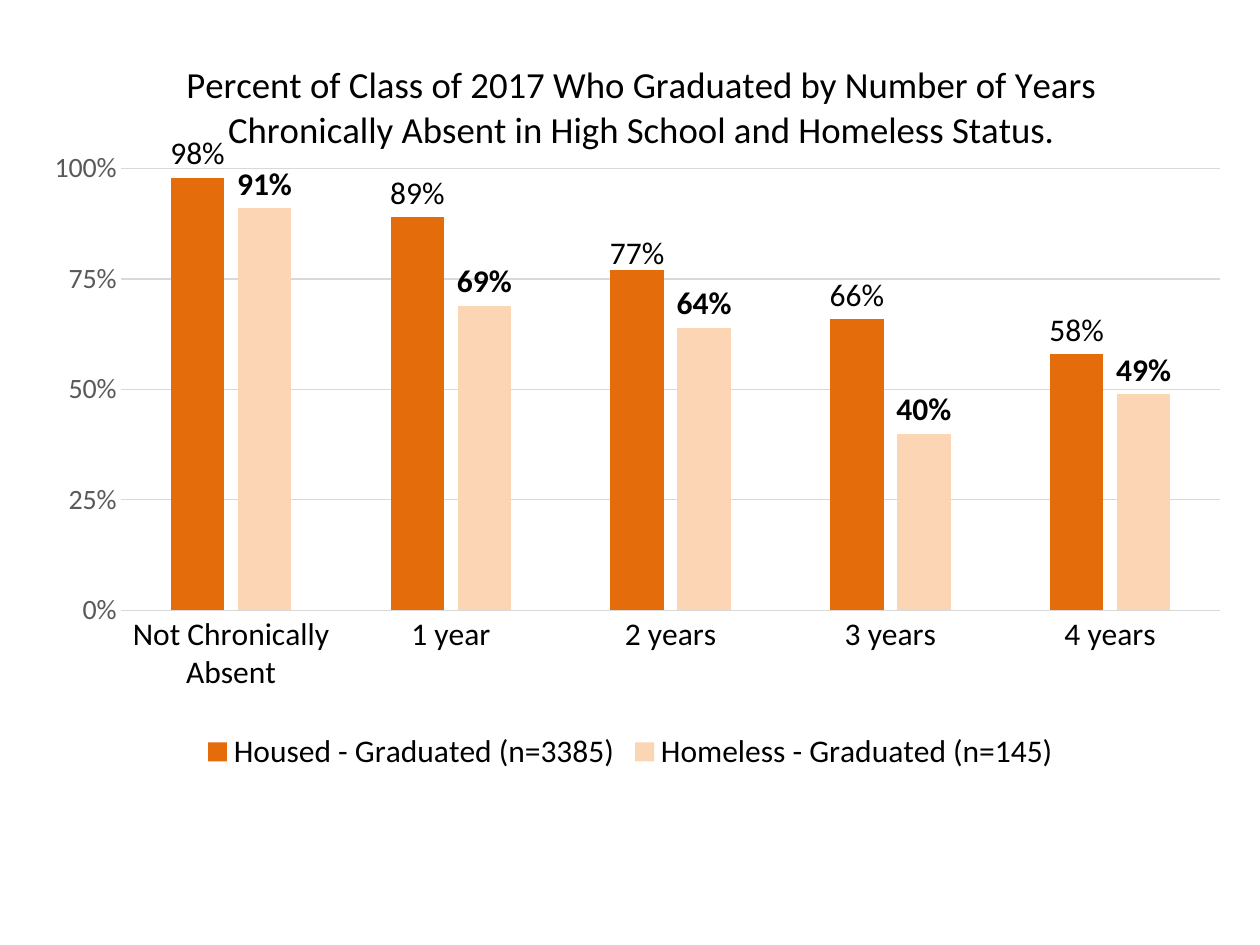
"""Build a slide with a column chart of graduation rates by absence and housing."""
from dataclasses import dataclass

from lxml import etree
from pptx import Presentation
from pptx.chart.data import CategoryChartData
from pptx.dml.color import RGBColor
from pptx.enum.chart import (XL_CHART_TYPE, XL_LABEL_POSITION,
                             XL_LEGEND_POSITION, XL_TICK_MARK)
from pptx.oxml.ns import qn
from pptx.util import Cm, Pt

COLUMNS = XL_CHART_TYPE.COLUMN_CLUSTERED
OUTSIDE = XL_LABEL_POSITION.OUTSIDE_END
BOTTOM = XL_LEGEND_POSITION.BOTTOM
NO_TICK = XL_TICK_MARK.NONE

BLACK = RGBColor(0x00, 0x00, 0x00)
GRAY = RGBColor(0x59, 0x59, 0x59)
LIGHT_GRAY = RGBColor(0xD9, 0xD9, 0xD9)
ORANGE = RGBColor(0xE4, 0x6C, 0x0A)
PEACH = RGBColor(0xFC, 0xD5, 0xB5)

PERCENT = "0%"
TITLE = ("Percent of Class of 2017 Who Graduated by Number of Years "
         "Chronically Absent in High School and Homeless Status.")
CATEGORIES = ["Not Chronically Absent", "1 year", "2 years", "3 years", "4 years"]


@dataclass
class Group:
    name: str
    rates: list[float]
    color: RGBColor
    bold: bool


GROUPS = [
    Group("Housed - Graduated (n=3385)", [0.98, 0.89, 0.77, 0.66, 0.58], ORANGE, False),
    Group("Homeless - Graduated (n=145)", [0.91, 0.69, 0.64, 0.4, 0.49], PEACH, True),
]


def set_font(font, size: int, color: RGBColor = BLACK, bold: bool = False) -> None:
    """Apply the chart typeface with a size, colour and weight."""
    for name, value in {"name": "Calibri", "size": Pt(size), "bold": bold}.items():
        setattr(font, name, value)
    font.color.rgb = color


def set_line(line) -> None:
    """Draw a thin light gray line."""
    line.color.rgb = LIGHT_GRAY
    line.width = Pt(0.75)


def set_layout(parent, index: int, values: dict[str, str | float]) -> None:
    """Give a chart element a manual layout."""
    for old in parent.findall(qn("c:layout")):
        parent.remove(old)
    layout = etree.Element(qn("c:layout"))
    manual = etree.SubElement(layout, qn("c:manualLayout"))
    for name, value in values.items():
        etree.SubElement(manual, qn(f"c:{name}")).set("val", str(value))
    parent.insert(index, layout)


def style_axes(chart) -> None:
    """Format both axes and the gridlines."""
    cat, val = chart.category_axis, chart.value_axis
    for axis, size, color in ((cat, 18, BLACK), (val, 16, GRAY)):
        axis.major_tick_mark = axis.minor_tick_mark = NO_TICK
        set_font(axis.tick_labels.font, size, color)
    set_line(cat.format.line)
    for name, value in {"minimum_scale": 0, "maximum_scale": 1, "major_unit": 0.25}.items():
        setattr(val, name, value)
    val.format.line.fill.background()
    set_line(val.major_gridlines.format.line)
    val.tick_labels.number_format = PERCENT
    val.tick_labels.number_format_is_linked = False


def style_series(series, group: Group) -> None:
    """Colour one series and format its value labels."""
    series.format.fill.solid()
    series.format.fill.fore_color.rgb = group.color
    series.invert_if_negative = False
    labels = series.data_labels
    set_font(labels.font, 18, bold=group.bold)
    for name, value in {"show_value": True, "number_format": PERCENT,
                        "number_format_is_linked": False, "position": OUTSIDE}.items():
        setattr(labels, name, value)


def add_rate_chart(s) -> None:
    """Add the graduation rate chart to the slide."""
    data = CategoryChartData(number_format=PERCENT)
    data.categories = CATEGORIES
    for group in GROUPS:
        data.add_series(group.name, group.rates)
    chart = s.shapes.add_chart(COLUMNS, Cm(0.43), Cm(0.43), Cm(24.56), Cm(15.24), data).chart
    set_font(chart.font, 10)

    p = chart.chart_title.text_frame.paragraphs[0]
    r = p.add_run()
    r.text = TITLE
    set_font(r.font, 21)
    chart.chart_title.include_in_layout = False

    chart.has_legend = True
    chart.legend.position = BOTTOM
    chart.legend.include_in_layout = False
    set_font(chart.legend.font, 18)

    plot = chart.plots[0]
    for name, value in {"gap_width": 185, "overlap": -25, "vary_by_categories": False}.items():
        setattr(plot, name, value)
    style_axes(chart)
    for series, group in zip(plot.series, GROUPS):
        style_series(series, group)

    lowered = plot.series[0].points[2].data_label
    set_font(lowered.font, 18)
    lowered.position = OUTSIDE

    root = chart.element
    set_layout(root.xpath("c:chart/c:title")[0], 1,
               {"xMode": "edge", "yMode": "edge", "x": 0.13, "y": 0.04})
    set_layout(root.xpath("c:chart/c:plotArea")[0], 0,
               {"layoutTarget": "inner", "xMode": "edge", "yMode": "edge",
                "x": 0.082, "y": 0.195, "w": 0.902, "h": 0.584})
    set_layout(root.xpath(".//c:dLbl")[0], 1, {"x": 0, "y": 0.01})


def main() -> None:
    """Create and save the presentation."""
    prs = Presentation()
    prs.slide_width, prs.slide_height = Cm(25.4), Cm(19.05)
    s = prs.slides.add_slide(prs.slide_layouts[6])
    add_rate_chart(s)
    prs.save("out.pptx")


if __name__ == "__main__":
    main()
